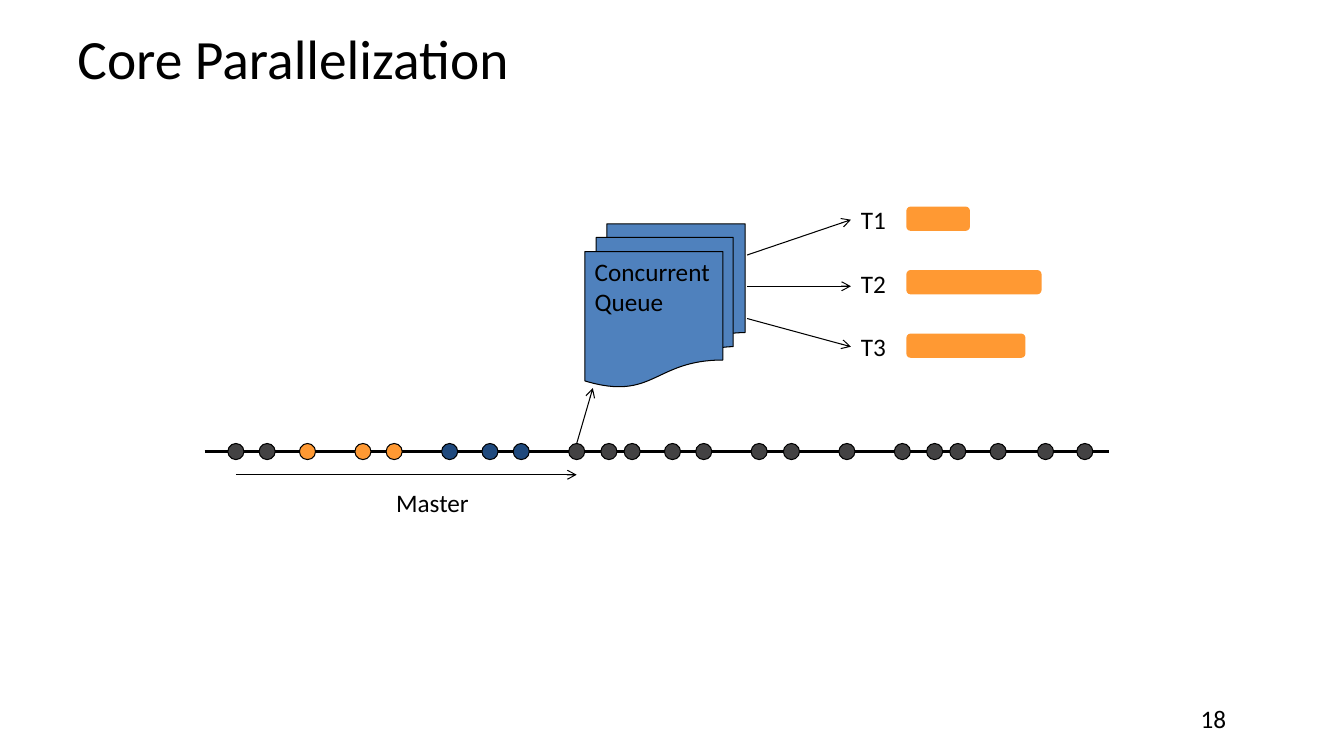
from lxml import etree
from pptx import Presentation
from pptx.dml.color import RGBColor
from pptx.enum.shapes import MSO_CONNECTOR, MSO_SHAPE as Preset
from pptx.enum.text import MSO_ANCHOR as Anchor, PP_ALIGN as Align
from pptx.oxml.ns import qn
from pptx.util import Pt

PX = 9144
BLACK = RGBColor(0x00, 0x00, 0x00)
GRAY = RGBColor(0x43, 0x42, 0x43)
ORANGE = RGBColor(0xFF, 0x99, 0x33)
NAVY = RGBColor(0x1F, 0x49, 0x7D)
BLUE = RGBColor(0x4F, 0x81, 0xBD)

DOT = 16
EVENTS = [
    (GRAY, [23, 54]),
    (ORANGE, [94, 149, 180]),
    (NAVY, [235, 275, 306]),
    (GRAY, [361, 393, 416, 456, 487, 542, 574, 629, 684, 716, 739, 779, 826, 865]),
]
THREADS = [("T1", 63), ("T2", 134), ("T3", 118)]


def emu(*lengths):
    return [length * PX for length in lengths]


def write(frame, text, size=18, anchor=Anchor.TOP, wrap=True):
    frame.word_wrap = wrap
    frame.vertical_anchor = anchor
    for index, line in enumerate(text.split("\n")):
        paragraph = frame.add_paragraph() if index else frame.paragraphs[0]
        paragraph.alignment = Align.LEFT
        run = paragraph.add_run()
        run.text = line
        run.font.size = Pt(size)
        run.font.name = "Calibri"
        run.font.color.rgb = BLACK


def add_text(slide, box, text, **text_format):
    label = slide.shapes.add_textbox(*emu(*box))
    write(label.text_frame, text, **text_format)


def add_filled(slide, preset, box, fill, outlined=True):
    shape = slide.shapes.add_shape(preset, *emu(*box))
    shape.shadow.inherit = False
    shape.fill.solid()
    shape.fill.fore_color.rgb = fill
    if outlined:
        shape.line.color.rgb = BLACK
        shape.line.width = Pt(0.75)
    else:
        shape.line.fill.background()
    return shape


def add_line(slide, start, end, width=0.75, arrow=True):
    line = slide.shapes.add_connector(MSO_CONNECTOR.STRAIGHT, *emu(*start, *end))
    line.line.color.rgb = BLACK
    line.line.width = Pt(width)
    if arrow:
        etree.SubElement(line.line._get_or_add_ln(), qn("a:tailEnd"), type="arrow")
    etree.SubElement(line._element.spPr, qn("a:effectLst"))


def draw_timeline(slide, left, top, width):
    axis = top + DOT // 2
    add_line(slide, (left, axis), (left + width, axis), width=2.25, arrow=False)
    for color, offsets in EVENTS:
        for offset in offsets:
            add_filled(slide, Preset.OVAL, (left + offset, top, DOT, DOT), color)
    master = top + 31
    add_line(slide, (left + 31, master), (left + 369, master))
    add_text(slide, (left + 180, master + 8, 118, 40), "Master")
    add_line(slide, (left + 369, top), (left + 385, top - 55))


def draw_queue(slide, left, top, width, height):
    queue = add_filled(slide, Preset.FLOWCHART_MULTIDOCUMENT,
                       (left, top, width, height), BLUE)
    write(queue.text_frame, "Concurrent\nQueue", wrap=False)
    for departure, arrival in [(31, -4), (62, 62), (94, 122)]:
        add_line(slide, (left + width + 2, top + departure),
                 (left + width + 105, top + arrival))


def draw_threads(slide, left, top, pitch):
    for row, (thread, load) in enumerate(THREADS):
        y = top + row * pitch
        add_text(slide, (left, y, 55, 40), thread)
        add_filled(slide, Preset.ROUNDED_RECTANGLE, (left + 55, y + 7, load, 24),
                   ORANGE, outlined=False)


def main():
    deck = Presentation()
    deck.slide_width, deck.slide_height = emu(1333, 750)
    slide = deck.slides.add_slide(deck.slide_layouts[6])
    add_text(slide, (67, 17, 1200, 80), "Core Parallelization",
             size=39.6, anchor=Anchor.MIDDLE)
    draw_timeline(slide, 203, 440, 897)
    draw_queue(slide, 580, 222, 159, 162)
    draw_threads(slide, 844, 198, 63)
    add_text(slide, (1181, 693, 127, 40), "18")
    deck.save("out.pptx")


if __name__ == "__main__":
    main()
